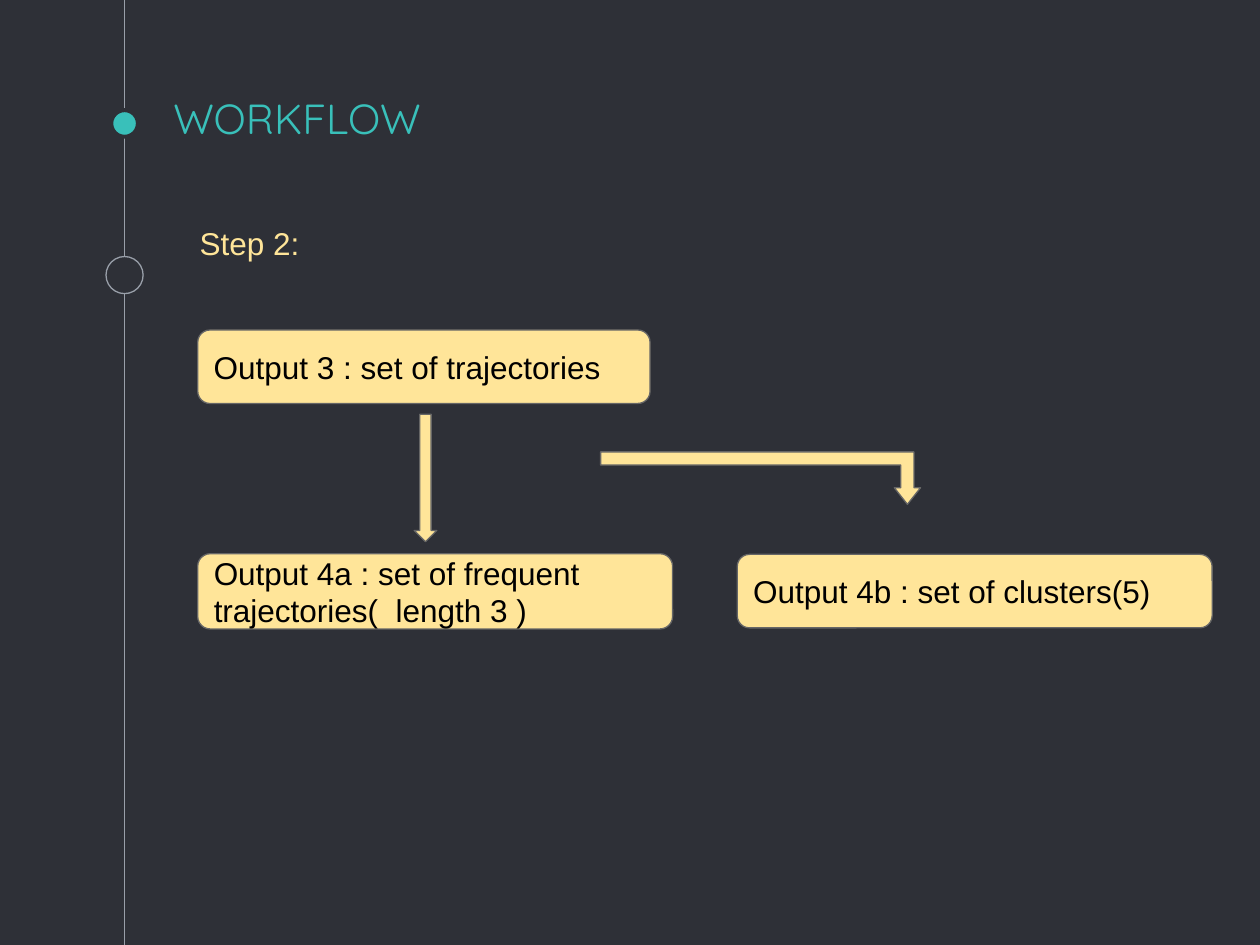
from lxml import etree
from pptx import Presentation
from pptx.dml.color import RGBColor
from pptx.enum.shapes import MSO_CONNECTOR, MSO_SHAPE
from pptx.enum.text import MSO_ANCHOR, PP_ALIGN
from pptx.oxml.ns import qn
from pptx.util import Pt

DARK = RGBColor(0x2E, 0x30, 0x37)
TEAL = RGBColor(0x39, 0xC0, 0xBA)
RAIL = RGBColor(0x99, 0x9F, 0xA9)
CREAM = RGBColor(0xFF, 0xE5, 0x99)
GREY = RGBColor(0x66, 0x66, 0x66)
BLACK = RGBColor(0, 0, 0)

RAIL_X = 71.2
BOX_X = 113


def set_text(shape, text, color, font="Arial", size=18, anchor=MSO_ANCHOR.MIDDLE):
    tf = shape.text_frame
    frame = dict.fromkeys(
        ("margin_left", "margin_top", "margin_right", "margin_bottom"), Pt(7.2))
    frame.update(word_wrap=True, vertical_anchor=anchor)
    for name, value in frame.items():
        setattr(tf, name, value)
    p = tf.paragraphs[0]
    p.alignment = PP_ALIGN.LEFT
    r = p.add_run()
    r.text = text
    for name, value in {"name": font, "size": Pt(size)}.items():
        setattr(r.font, name, value)
    r.font.color.rgb = color


def add_label(s, box, text, color, **fmt):
    sp = s.shapes.add_textbox(*map(Pt, box))
    set_text(sp, text, color, **fmt)


def add_figure(s, kind, box, adj=(), fill=CREAM, line=GREY, width=0.75):
    sp = s.shapes.add_shape(kind, *map(Pt, box))
    sp.shadow.inherit = False
    sp.fill.solid()
    sp.fill.fore_color.rgb = fill
    sp.line.color.rgb = line
    sp.line.width = Pt(width)
    for i, value in enumerate(adj):
        sp.adjustments[i] = value
    return sp


def add_dot(s, cy, size, **fmt):
    box = (RAIL_X - size / 2, cy - size / 2, size, size)
    add_figure(s, MSO_SHAPE.OVAL, box, **fmt)


def add_output(s, box, text):
    sp = add_figure(s, MSO_SHAPE.ROUNDED_RECTANGLE, box, (0.167,))
    set_text(sp, text, BLACK)


def add_rail(s, bottom):
    cx = s.shapes.add_connector(MSO_CONNECTOR.STRAIGHT, Pt(RAIL_X), 0, Pt(RAIL_X), Pt(bottom))
    cx.line.color.rgb = RAIL
    cx.line.width = Pt(0.75)
    etree.SubElement(cx._element.spPr, qn("a:effectLst"))


def main():
    prs = Presentation()
    prs.slide_width, prs.slide_height = Pt(720), Pt(540)
    s = prs.slides.add_slide(prs.slide_layouts[6])
    s.background.fill.solid()
    s.background.fill.fore_color.rgb = DARK

    # Timeline on the left
    add_rail(s, 540)
    add_dot(s, 70.6, 15.2, fill=TEAL, line=DARK, width=2.25)
    add_dot(s, 157.2, 21.2, fill=DARK, line=RAIL)

    # Headings
    add_label(s, (92, 53, 540, 36), "WORKFLOW", TEAL,
              font="Quicksand", size=24, anchor=MSO_ANCHOR.BOTTOM)
    add_label(s, (107, 113, 236, 52), "Step 2:", CREAM)

    # Outputs
    add_output(s, (BOX_X, 188.6, 258.5, 42), "Output 3 : set of trajectories")
    add_output(s, (BOX_X, 316.4, 271.4, 43), "Output 4a : set of frequent trajectories(  length 3 )")
    add_output(s, (421.3, 316.8, 271.4, 42), "Output 4b : set of clusters(5)")

    # Arrows to the two results
    add_figure(s, MSO_SHAPE.DOWN_ARROW, (236.7, 236.7, 12.9, 72.9), (0.5, 0.5))
    bent = add_figure(s, MSO_SHAPE.BENT_UP_ARROW, (343.2, 258.2, 182.8, 30),
                      (0.25, 0.25, 0.317))
    bent.rotation = 180
    bent._element.spPr.xfrm.set("flipH", "1")

    prs.save("out.pptx")


if __name__ == "__main__":
    main()
